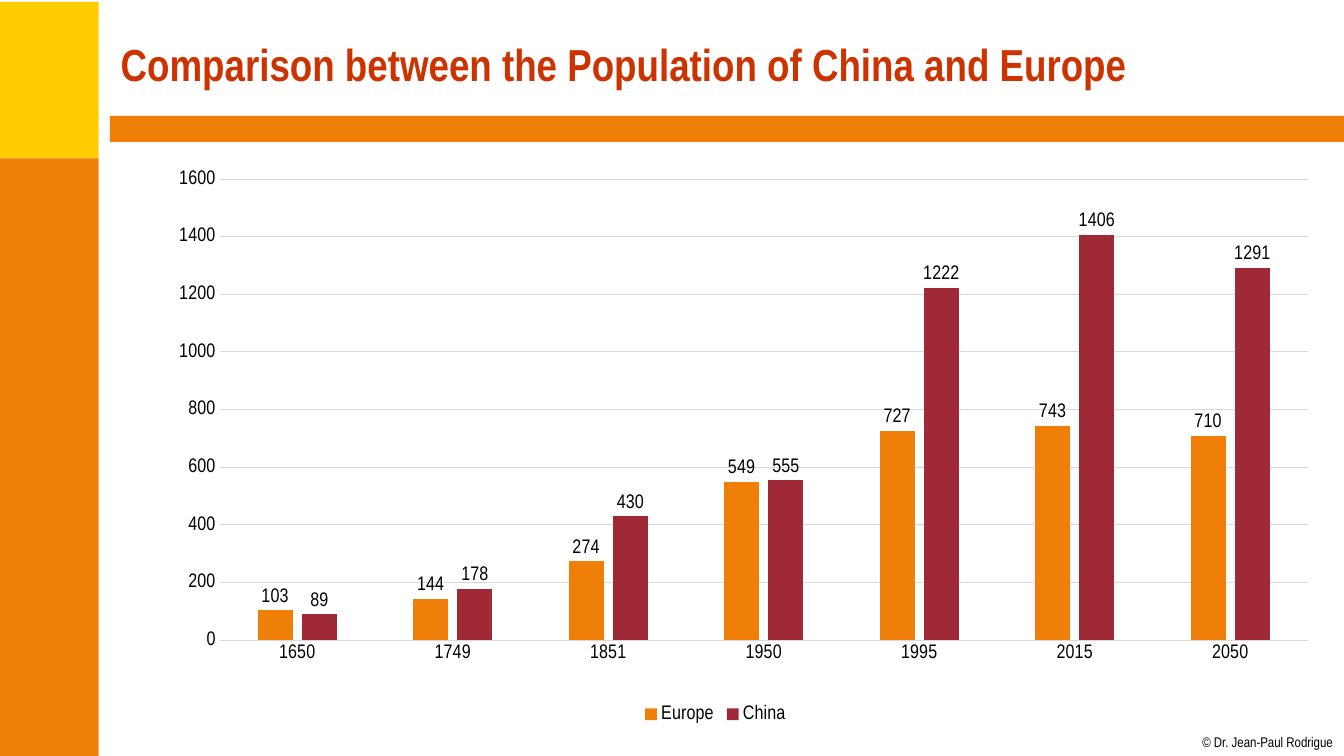
from dataclasses import dataclass

from pptx import Presentation
from pptx.chart.data import CategoryChartData
from pptx.dml.color import RGBColor as Rgb
from pptx.enum.chart import XL_CHART_TYPE as ChartType
from pptx.enum.chart import XL_LABEL_POSITION as LabelPosition
from pptx.enum.chart import XL_LEGEND_POSITION as LegendPosition
from pptx.enum.chart import XL_TICK_MARK as TickMark
from pptx.enum.shapes import MSO_SHAPE as Preset
from pptx.enum.text import MSO_ANCHOR as Anchor
from pptx.oxml import parse_xml
from pptx.oxml.ns import nsdecls, qn
from pptx.util import Cm, Pt


@dataclass(frozen=True)
class Theme:
    """Colours, typeface and type sizes of the deck."""
    yellow: str = "FFCC00"
    orange: str = "F07F09"
    crimson: str = "9F2936"
    red: str = "CC3300"
    black: str = "000000"
    grey: str = "D9D9D9"
    face: str = "Arial Narrow"
    title_size: int = 32
    chart_size: int = 14
    credit_size: int = 10


def apply(target, values):
    """Set each named attribute on the target."""
    for name, value in values.items():
        setattr(target, name, value)


class SlideBuilder:
    """Draws elements on the current page in one style."""

    def __init__(self, page, theme):
        """Keep the page and its theme."""
        self.page = page
        self.theme = theme

    def style_font(self, font, size, color, bold=False):
        """Give a font the theme face with a size and colour."""
        apply(font, {"name": self.theme.face, "size": Pt(size), "bold": bold})
        font.color.rgb = Rgb.from_string(color)

    def style_line(self, line):
        """Make a thin grey chart line."""
        line.color.rgb = Rgb.from_string(self.theme.grey)
        line.width = Pt(0.75)

    def band(self, place, color):
        """Add a plain coloured rectangle."""
        shape = self.page.shapes.add_shape(Preset.RECTANGLE, *map(Cm, place))
        shape.shadow.inherit = False
        shape.fill.solid()
        shape.fill.fore_color.rgb = Rgb.from_string(color)
        shape.line.fill.background()

    def text(self, place, words, size, color, bold=False, **frame_format):
        """Add a one-paragraph text box."""
        box = self.page.shapes.add_textbox(*map(Cm, place))
        apply(box.text_frame, frame_format)
        span = box.text_frame.paragraphs[0].add_run()
        span.text = words
        self.style_font(span.font, size, color, bold)

    def columns(self, place, categories, series, plot_area):
        """Add a clustered column chart with labels and a bottom legend."""
        theme = self.theme
        data = CategoryChartData()
        data.categories = categories
        for name, (values, _) in series.items():
            data.add_series(name, values)
        chart = self.page.shapes.add_chart(
            ChartType.COLUMN_CLUSTERED, *map(Cm, place), data).chart
        apply(chart, {"has_title": False, "has_legend": True})
        apply(chart.legend, {"position": LegendPosition.BOTTOM, "include_in_layout": False})
        plot = chart.plots[0]
        apply(plot, {"gap_width": 219, "overlap": -27,
                     "vary_by_categories": False, "has_data_labels": True})
        apply(plot.data_labels, {"show_value": True, "position": LabelPosition.OUTSIDE_END})
        for axis in (chart.category_axis, chart.value_axis):
            apply(axis, {"major_tick_mark": TickMark.NONE, "minor_tick_mark": TickMark.NONE})
        for item in (chart, chart.legend):
            self.style_font(item.font, theme.chart_size, theme.black)
        for item in (chart.category_axis.tick_labels, chart.value_axis.tick_labels,
                     plot.data_labels):
            self.style_font(item.font, theme.chart_size, theme.black)
        apply(chart.value_axis, {"minimum_scale": 0, "maximum_scale": 1600, "major_unit": 200})
        self.style_line(chart.category_axis.format.line)
        self.style_line(chart.value_axis.major_gridlines.format.line)
        chart.value_axis.format.line.fill.background()
        for bars, (_, color) in zip(plot.series, series.values()):
            bars.format.fill.solid()
            bars.format.fill.fore_color.rgb = Rgb.from_string(color)
        self.place_plot(chart, plot_area)

    def place_plot(self, chart, plot_area):
        """Fix the inner plot area as fractions of the chart."""
        area = chart.element.find(".//" + qn("c:plotArea"))
        for old in area.findall(qn("c:layout")):
            area.remove(old)
        modes = '<c:xMode val="edge"/><c:yMode val="edge"/>'
        sizes = "".join(f'<c:{key} val="{part}"/>' for key, part in zip("xywh", plot_area))
        area.insert(0, parse_xml(
            f'<c:layout {nsdecls("c")}><c:manualLayout><c:layoutTarget val="inner"/>'
            f'{modes}{sizes}</c:manualLayout></c:layout>'))


def main():
    """Build the population slide."""
    theme = Theme()
    deck = Presentation()
    apply(deck, {"slide_width": Cm(33.87), "slide_height": Cm(19.05)})
    page = deck.slides.add_slide(deck.slide_layouts[6])
    builder = SlideBuilder(page, theme)

    builder.band((0, 0.05, 2.49, 3.94), theme.yellow)
    builder.band((0, 3.99, 2.49, 15.06), theme.orange)
    builder.band((2.77, 2.92, 31.1, 0.66), theme.orange)
    builder.text((30.3, 18.49, 3.33, 0.43), "© Dr. Jean-Paul Rodrigue",
                 theme.credit_size, theme.black, word_wrap=False,
                 margin_left=0, margin_right=0, margin_top=0, margin_bottom=0)
    builder.text((2.79, 0.28, 30.48, 2.64),
                 "Comparison between the Population of China and Europe",
                 theme.title_size, theme.red, bold=True,
                 word_wrap=True, vertical_anchor=Anchor.MIDDLE)
    builder.columns(
        (2.79, 3.63, 30.48, 14.71),
        ("1650", "1749", "1851", "1950", "1995", "2015", "2050"),
        {"Europe": ((103, 144, 274, 549, 727, 743, 710), theme.orange),
         "China": ((89, 178, 430, 555, 1222, 1406, 1291), theme.crimson)},
        (0.09, 0.06, 0.9, 0.79))
    deck.save("out.pptx")


if __name__ == "__main__":
    main()
